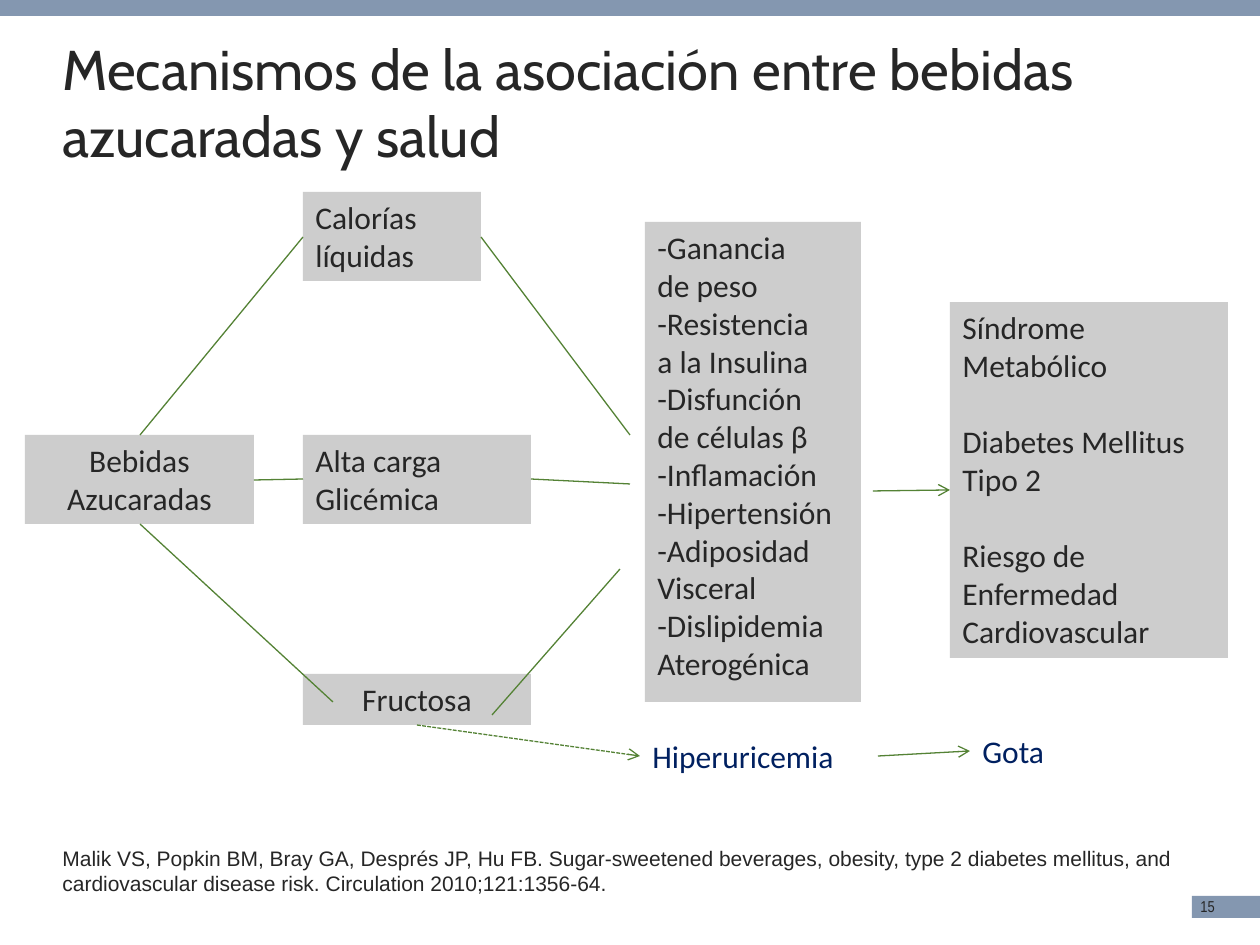
import pptx
import pptx.dml.color
import pptx.enum.dml
import pptx.enum.shapes
import pptx.enum.text
import pptx.oxml
import pptx.oxml.ns
import pptx.util

EMU_PER_PX = 914400 / 126
INK, NAVY, GREY, GREEN, BLUE = "262626", "002060", "CDCDCD", "548235", "8497B0"
LEFT = pptx.enum.text.PP_ALIGN.LEFT
CENTER = pptx.enum.text.PP_ALIGN.CENTER
TOP = pptx.enum.text.MSO_ANCHOR.TOP
MIDDLE = pptx.enum.text.MSO_ANCHOR.MIDDLE
LINE_HEIGHT = 22  # points, one line of 18 pt Calibri

EFFECTS = (
    "Ganancia\nde peso", "Resistencia\na la Insulina", "Disfunción\nde células β",
    "Inflamación", "Hipertensión", "Adiposidad\nVisceral", "Dislipidemia\nAterogénica",
)
CITATION = (
    "Malik VS, Popkin BM, Bray GA, Després JP, Hu FB. Sugar-sweetened beverages, "
    "obesity, type 2 diabetes mellitus, and cardiovascular disease risk. "
    "Circulation 2010;121:1356-64."
)


def px(*lengths):
    return [pptx.util.Emu(round(length * EMU_PER_PX)) for length in lengths]


def rgb(code):
    return pptx.dml.color.RGBColor.from_string(code)


def write(frame, text, size=18, font="Calibri", color=INK, align=LEFT, anchor=TOP):
    frame.word_wrap = True
    frame.vertical_anchor = anchor
    frame.text = text
    for paragraph in frame.paragraphs:
        paragraph.alignment = align
        for run in paragraph.runs:
            run.font.size = pptx.util.Pt(size)
            run.font.name = font
            run.font.color.rgb = rgb(color)


def add_label(slide, box, text, **style):
    label = slide.shapes.add_textbox(*px(*box))
    write(label.text_frame, text, **style)
    return label


def add_block(slide, box, color=GREY):
    block = slide.shapes.add_shape(pptx.enum.shapes.MSO_SHAPE.RECTANGLE, *px(*box))
    block.shadow.inherit = False
    block.fill.solid()
    block.fill.fore_color.rgb = rgb(color)
    block.line.fill.background()
    return block


def add_concept(slide, box, text, align=LEFT):
    concept = add_block(slide, box)
    write(concept.text_frame, text, align=align)
    return concept


def add_link(slide, start, end, arrow=False, dashed=False):
    link = slide.shapes.add_connector(
        pptx.enum.shapes.MSO_CONNECTOR.STRAIGHT, *px(*start, *end))
    link.line.color.rgb = rgb(GREEN)
    link.line.width = pptx.util.Pt(0.75)
    if dashed:
        link.line.dash_style = pptx.enum.dml.MSO_LINE.SQUARE_DOT
    properties = link._element.spPr
    if arrow:
        head = pptx.oxml.parse_xml(
            f'<a:tailEnd {pptx.oxml.ns.nsdecls("a")} type="arrow"/>')
        link.line._get_or_add_ln().append(head)
    properties.append(
        pptx.oxml.parse_xml(f'<a:effectLst {pptx.oxml.ns.nsdecls("a")}/>'))


def add_frame(slide):
    """Add the top bar, title, page number and citation."""
    add_block(slide, (0, 0, 1260, 16), BLUE)
    add_block(slide, (1192, 896, 68, 22), BLUE)
    add_label(slide, (1188, 891, 49, 31), "15", size=9, font="Arial Narrow")
    add_label(slide, (50, 27, 1134, 149),
              "Mecanismos de la asociación entre bebidas azucaradas y salud",
              size=32, font="Cabin", anchor=MIDDLE)
    add_label(slide, (50, 839, 1193, 89), CITATION, size=12, font="Arial")


def add_concepts(slide):
    add_concept(slide, (25, 435, 229, 89), "Bebidas Azucaradas", CENTER)
    add_concept(slide, (303, 192, 178, 89), "Calorías\nlíquidas")
    add_concept(slide, (303, 435, 228, 89), "Alta carga\nGlicémica")
    add_concept(slide, (303, 674, 228, 51), "Fructosa", CENTER)
    add_concept(slide, (645, 222, 216, 480),
                "\n".join("-" + effect for effect in EFFECTS))
    diseases = add_concept(
        slide, (950, 302, 278, 356),
        "Síndrome\nMetabólico\nDiabetes Mellitus Tipo 2\n"
        "Riesgo de Enfermedad Cardiovascular")
    for disease in diseases.text_frame.paragraphs[2:]:
        disease.space_before = pptx.util.Pt(LINE_HEIGHT)
    add_label(slide, (640, 731, 238, 51), "Hiperuricemia", color=NAVY)
    add_label(slide, (970, 726, 238, 51), "Gota", color=NAVY)


def add_links(slide):
    for start, end in (
        ((140, 435), (303, 237)),
        ((254, 480), (303, 479)),
        ((140, 524), (333, 702)),
        ((481, 237), (630, 435)),
        ((531, 479), (630, 484)),
        ((492, 715), (620, 569)),
    ):
        add_link(slide, start, end)
    add_link(slide, (873, 491), (950, 490), arrow=True)
    add_link(slide, (417, 725), (640, 756), arrow=True, dashed=True)
    add_link(slide, (878, 756), (970, 751), arrow=True)


def main():
    deck = pptx.Presentation()
    deck.slide_width, deck.slide_height = px(1260, 945)
    slide = deck.slides.add_slide(deck.slide_layouts[6])
    add_frame(slide)
    add_concepts(slide)
    add_links(slide)
    deck.save("out.pptx")


if __name__ == "__main__":
    main()
